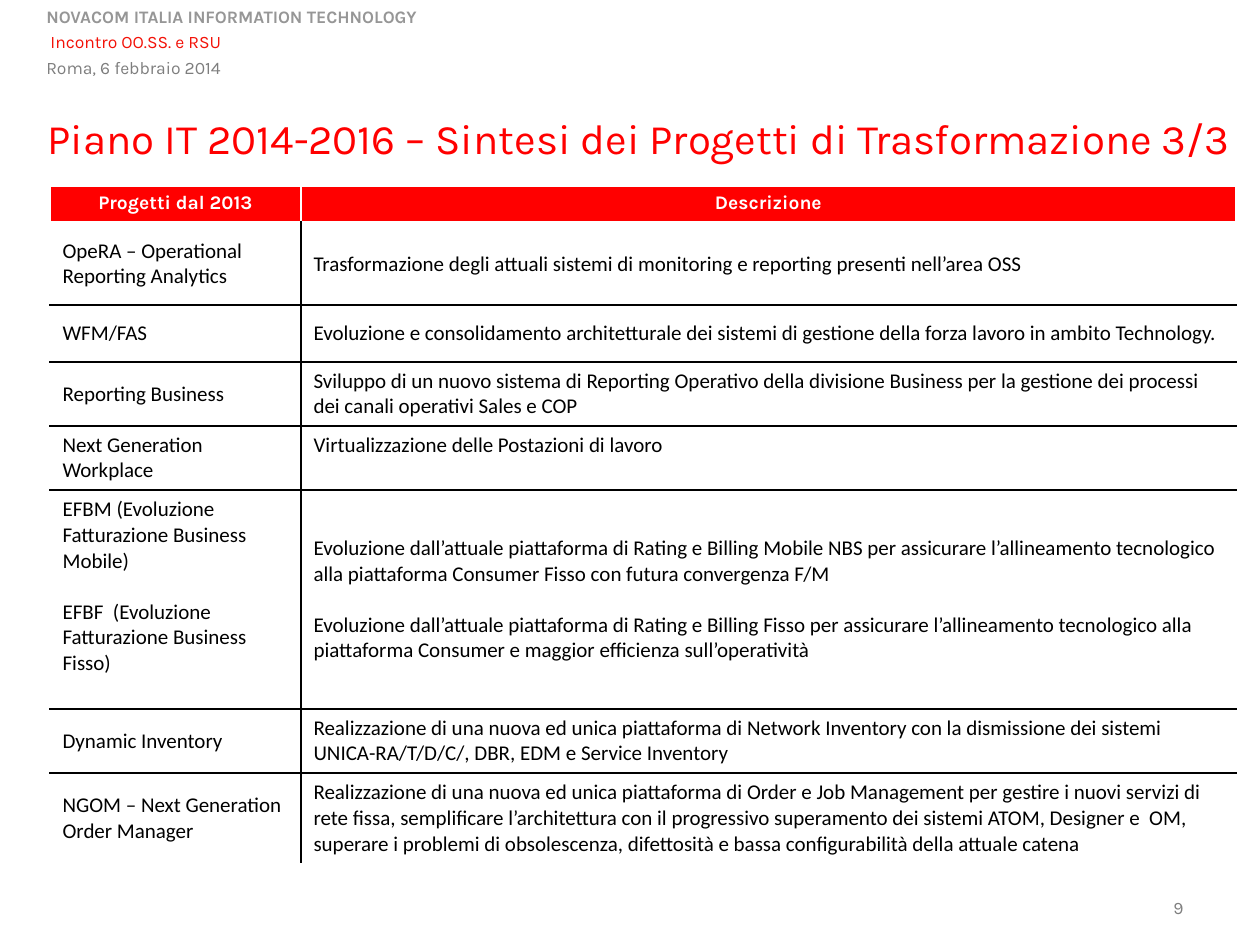
import pptx
import pptx.dml.color
import pptx.enum.text
import pptx.oxml
import pptx.oxml.ns
import pptx.util

EMU_PER_PX = 914400 / 126
ALIGN = pptx.enum.text.PP_ALIGN
ANCHOR = pptx.enum.text.MSO_ANCHOR
COLORS = {
    "red": "FF0000",
    "subtitle": "F31107",
    "company": "969696",
    "grey": "7E7E7E",
    "black": "000000",
    "white": "FFFFFF",
}
COLUMN_WIDTHS = [251, 935]
ROW_HEIGHTS = [37, 82, 57, 64, 64, 219, 64, 91]
BOTTOM_MARGINS = {(4, 1): 32, (5, 0): 32}
PROJECTS = [
    ("Progetti dal 2013", "Descrizione"),
    ("OpeRA – Operational Reporting Analytics",
     "Trasformazione degli attuali sistemi di monitoring e reporting presenti nell’area OSS"),
    ("WFM/FAS",
     "Evoluzione e consolidamento architetturale dei sistemi di gestione della forza lavoro "
     "in ambito Technology."),
    ("Reporting Business",
     "Sviluppo di un nuovo sistema di Reporting Operativo della divisione Business per la "
     "gestione dei processi dei canali operativi Sales e COP"),
    ("Next Generation Workplace", "Virtualizzazione delle Postazioni di lavoro"),
    ("EFBM (Evoluzione Fatturazione Business Mobile)\n"
     "EFBF  (Evoluzione Fatturazione Business Fisso)",
     "Evoluzione dall’attuale piattaforma di Rating e Billing Mobile NBS per assicurare "
     "l’allineamento tecnologico alla piattaforma Consumer Fisso con futura convergenza F/M\n"
     "Evoluzione dall’attuale piattaforma di Rating e Billing Fisso per assicurare "
     "l’allineamento tecnologico alla piattaforma Consumer e maggior efficienza "
     "sull’operatività"),
    ("Dynamic Inventory",
     "Realizzazione di una nuova ed unica piattaforma di Network Inventory con la dismissione "
     "dei sistemi UNICA-RA/T/D/C/, DBR, EDM e Service Inventory"),
    ("NGOM – Next Generation Order Manager",
     "Realizzazione di una nuova ed unica piattaforma di Order e Job Management per gestire i "
     "nuovi servizi di rete fissa, semplificare l’architettura con il progressivo superamento "
     "dei sistemi ATOM, Designer e  OM, superare i problemi di obsolescenza, difettosità e "
     "bassa configurabilità della attuale catena"),
]


def px(length):
    """Turn pixels into EMU."""
    return pptx.util.Emu(round(length * EMU_PER_PX))


def apply(target, values):
    """Set attributes from a dict of format values."""
    for name, value in values.items():
        setattr(target, name, value)


def write(paragraph, text, size, color, font="Karla", bold=False, **layout):
    """Write one formatted run into a paragraph."""
    run = paragraph.add_run()
    run.text = text
    apply(run.font, {"name": font, "size": pptx.util.Pt(size), "bold": bold})
    run.font.color.rgb = pptx.dml.color.RGBColor.from_string(COLORS[color])
    apply(paragraph, layout)


def add_label(slide, box, lines, anchor=ANCHOR.TOP):
    """Add a wrapping text box with one paragraph per line."""
    frame = slide.shapes.add_textbox(*map(px, box)).text_frame
    apply(frame, {"word_wrap": True, "vertical_anchor": anchor})
    for index, line in enumerate(lines):
        paragraph = frame.add_paragraph() if index else frame.paragraphs[0]
        write(paragraph, **line)


def set_title(slide, text):
    """Place and format the title placeholder."""
    title = slide.shapes.title
    apply(title, dict(zip(("left", "top", "width", "height"), map(px, (35, 116, 1212, 52)))))
    apply(title.text_frame, {"vertical_anchor": ANCHOR.MIDDLE,
                             "auto_size": pptx.enum.text.MSO_AUTO_SIZE.NONE})
    write(title.text_frame.paragraphs[0], text, 24, "red",
          alignment=ALIGN.LEFT, line_spacing=0.8)


def set_borders(cell, borders):
    """Draw the cell borders from colour and point width by side."""
    properties = cell._tc.get_or_add_tcPr()
    for side, (color, width) in borders.items():
        properties.append(pptx.oxml.parse_xml(
            f'<a:ln{side} {pptx.oxml.ns.nsdecls("a")} w="{pptx.util.Pt(width)}">'
            f'<a:solidFill><a:srgbClr val="{COLORS[color]}"/></a:solidFill></a:ln{side}>'))


def project_borders(row, column):
    """Give black lines between projects and white ones elsewhere."""
    last = len(PROJECTS) - 1
    return {
        "L": ("black" if row and column else "white", 1),
        "R": ("black" if row and not column else "white", 1),
        "T": ("black" if row > 1 else "white", 1 if row != 1 else 3),
        "B": ("black" if 0 < row < last else "white", 1 if row else 3),
    }


def fill_cell(cell, text, row, column):
    """Write and format one cell of the project table."""
    set_borders(cell, project_borders(row, column))
    cell.fill.solid()
    cell.fill.fore_color.rgb = pptx.dml.color.RGBColor.from_string(
        COLORS["white" if row else "red"])
    cell.vertical_anchor = ANCHOR.MIDDLE if row else ANCHOR.TOP
    if (row, column) in BOTTOM_MARGINS:
        cell.margin_bottom = px(BOTTOM_MARGINS[row, column])
    for index, line in enumerate(text.split("\n")):
        frame = cell.text_frame
        paragraph = frame.add_paragraph() if index else frame.paragraphs[0]
        if row:
            write(paragraph, line, 12, "black", font="Calibri", alignment=ALIGN.LEFT)
        else:
            write(paragraph, line, 11, "white", bold=True, alignment=ALIGN.CENTER)
        if index:
            paragraph.space_before = pptx.util.Pt(14.6)


def add_projects(slide):
    """Add the table of projects and descriptions."""
    box = (50, 186, sum(COLUMN_WIDTHS), sum(ROW_HEIGHTS))
    table = slide.shapes.add_table(
        len(PROJECTS), len(COLUMN_WIDTHS), *map(px, box)).table
    table.horz_banding = False
    for column, width in zip(table.columns, COLUMN_WIDTHS):
        column.width = px(width)
    for row, (height, texts) in enumerate(zip(ROW_HEIGHTS, PROJECTS)):
        table.rows[row].height = px(height)
        for column, text in enumerate(texts):
            fill_cell(table.cell(row, column), text, row, column)


def main():
    """Build the slide and save it."""
    presentation = pptx.Presentation()
    apply(presentation, {"slide_width": px(1260), "slide_height": px(945)})
    slide = presentation.slides.add_slide(presentation.slide_layouts[5])
    add_label(slide, (34, 0, 630, 84), [
        {"text": "NOVACOM ITALIA INFORMATION TECHNOLOGY", "size": 10,
         "color": "company", "bold": True},
        {"text": " Incontro OO.SS. e RSU", "size": 10, "color": "subtitle",
         "line_spacing": 1.2},
        {"text": "Roma, 6 febbraio 2014", "size": 10, "color": "grey",
         "line_spacing": 1.2},
    ])
    set_title(slide, "Piano IT 2014-2016 – Sintesi dei Progetti di Trasformazione 3/3")
    add_label(slide, (1057, 879, 139, 45), [
        {"text": "9", "size": 10, "color": "grey", "alignment": ALIGN.RIGHT},
    ], ANCHOR.BOTTOM)
    add_projects(slide)
    presentation.save("out.pptx")


if __name__ == "__main__":
    main()
